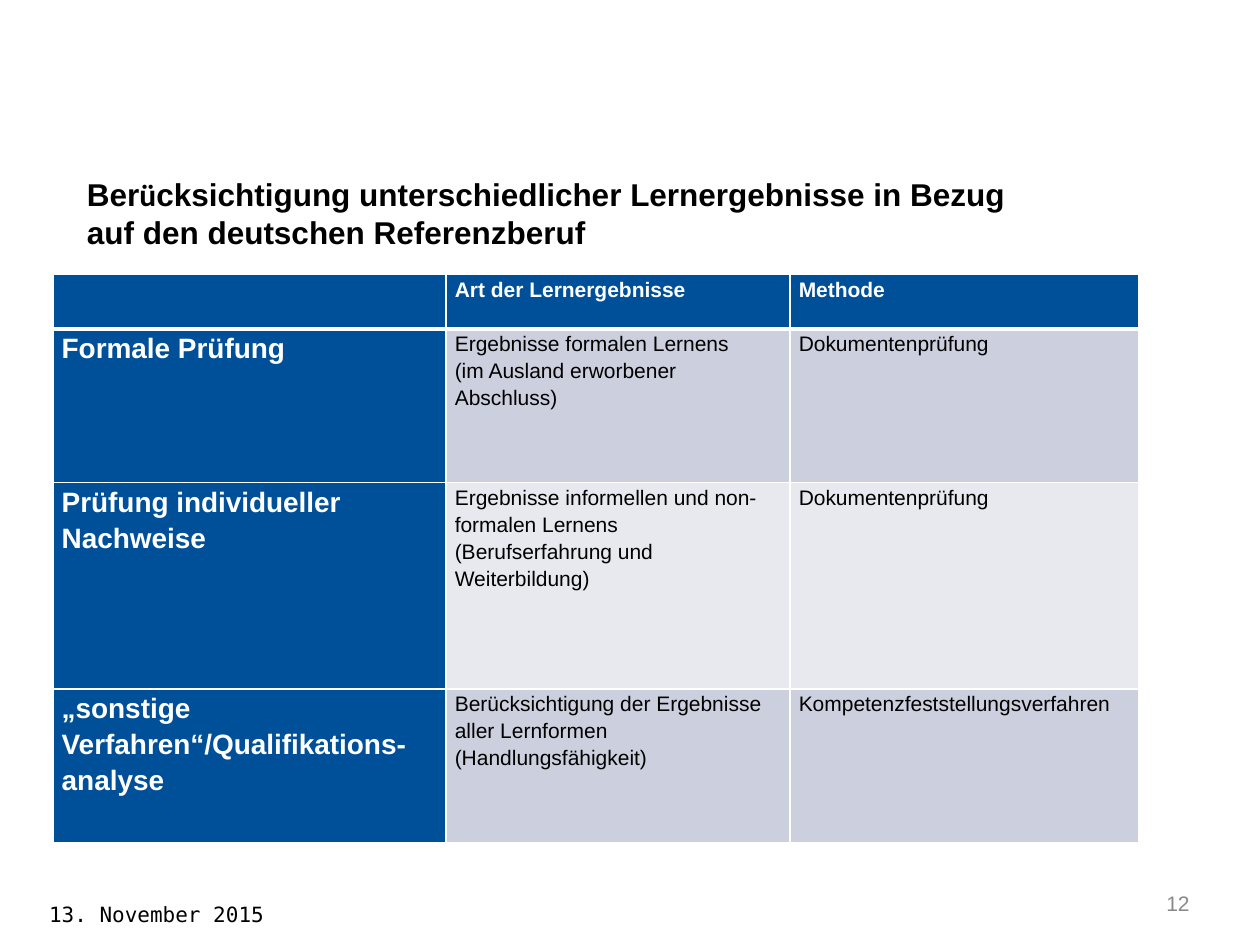
from lxml import etree
from pptx import Presentation
from pptx.dml.color import RGBColor
from pptx.enum import text
from pptx.oxml import ns
from pptx.util import Inches, Pt

THEME = {
    "font": "Arial", "accent": "Calibri", "mono": "DejaVu Sans Mono",
    "ink": "000000", "white": "FFFFFF", "grey": "898989",
    "blue": "005099", "bands": ("CCD0DE", "E7E9EF"),
    "title": 18, "label": 16, "body": 12,
}
TITLE = [
    [("Ber", "font"), ("ü", "accent"),
     ("cksichtigung unterschiedlicher Lernergebnisse in Bezug", "font")],
    [("auf den deutschen Referenzberuf", "font")],
]
ROWS = [
    ("", "Art der Lernergebnisse", "Methode"),
    ("Formale Prüfung",
     "Ergebnisse formalen Lernens\n(im Ausland erworbener Abschluss)",
     "Dokumentenprüfung"),
    ("Prüfung individueller Nachweise",
     "Ergebnisse informellen und non-formalen Lernens\n"
     "(Berufserfahrung und Weiterbildung)",
     "Dokumentenprüfung"),
    ("„sonstige Verfahren“/Qualifikations-analyse",
     "Berücksichtigung der Ergebnisse aller Lernformen\n(Handlungsfähigkeit)",
     "Kompetenzfeststellungsverfahren"),
]
WIDTHS = (3.12, 2.73, 2.77)
HEIGHTS = (0.43, 1.22, 1.64, 1.22)
DATE, PAGE = "13. November 2015", "12"


def apply(item, values):
    for name, value in values.items():
        setattr(item, name, value)


def style(run, size="body", color="ink", font="font", bold=False):
    apply(run.font, {"size": Pt(THEME[size]), "name": THEME[font], "bold": bold})
    run.font.color.rgb = RGBColor.from_string(THEME[color])


def border(cell, widths):
    """Draw white left, right, top and bottom borders, widths in points."""
    props = cell._tc.get_or_add_tcPr()
    for side, width in zip("LRTB", widths):
        line = etree.SubElement(props, ns.qn(f"a:ln{side}"), w=str(Pt(width)))
        fill = etree.SubElement(line, ns.qn("a:solidFill"))
        etree.SubElement(fill, ns.qn("a:srgbClr"), val=THEME["white"])


def add_title(slide):
    title = slide.shapes.title
    apply(title, {"left": Inches(0.59), "top": Inches(1.34),
                  "width": Inches(7.63), "height": Inches(1.01)})
    frame = title.text_frame
    apply(frame, {"word_wrap": False, "vertical_anchor": text.MSO_ANCHOR.TOP})
    for i, parts in enumerate(TITLE):
        para = frame.add_paragraph() if i else frame.paragraphs[0]
        para.alignment = text.PP_ALIGN.LEFT
        for words, font in parts:
            run = para.add_run()
            run.text = words
            style(run, "title", font=font, bold=True)


def add_grid(slide):
    frame = slide.shapes.add_table(
        len(ROWS), len(WIDTHS), Inches(0.42), Inches(2.18),
        Inches(sum(WIDTHS)), Inches(sum(HEIGHTS)))
    table = frame.table
    for col, width in zip(table.columns, WIDTHS):
        col.width = Inches(width)
    for row, height in zip(table.rows, HEIGHTS):
        row.height = Inches(height)
    for r, row in enumerate(ROWS):
        for c, words in enumerate(row):
            fill_cell(table.cell(r, c), words, r, c)


def fill_cell(cell, words, r, c):
    head = r == 0 or c == 0
    size = "label" if r and c == 0 else "body"
    apply(cell, {"margin_left": Inches(0.07), "margin_right": Inches(0.07),
                 "margin_top": 0, "margin_bottom": 0})
    border(cell, (1, 1, 3 if r == 1 else 1, 3 if r == 0 else 1))
    cell.fill.solid()
    shade = THEME["blue"] if head else THEME["bands"][(r - 1) % 2]
    cell.fill.fore_color.rgb = RGBColor.from_string(shade)
    para = cell.text_frame.paragraphs[0]
    para.line_spacing = 1.15
    if words:
        para.text = words
    for run in para.runs:
        style(run, size, "white" if head else "ink", bold=head)
    for gap in para._p.findall(ns.qn("a:br")):
        etree.SubElement(gap, ns.qn("a:rPr"), sz=str(THEME[size] * 100))


def add_note(slide, words, box, align, spacing=None, inset=0.1, **look):
    frame = slide.shapes.add_textbox(*map(Inches, box)).text_frame
    apply(frame, {"word_wrap": True, "margin_left": Inches(inset)})
    para = frame.paragraphs[0]
    apply(para, {"text": words, "alignment": align, "line_spacing": spacing})
    style(para.runs[0], **look)


def main():
    deck = Presentation()
    apply(deck, {"slide_width": Inches(10), "slide_height": Inches(7.5)})
    slide = deck.slides.add_slide(deck.slide_layouts[5])
    add_note(slide, DATE, (0, 6.89, 10, 0.59), text.PP_ALIGN.LEFT,
             Pt(30), 0.39, font="mono")
    add_note(slide, PAGE, (7.37, 7.02, 2.17, 0.28), text.PP_ALIGN.RIGHT,
             color="grey")
    add_grid(slide)
    add_title(slide)
    deck.save("out.pptx")


if __name__ == "__main__":
    main()
